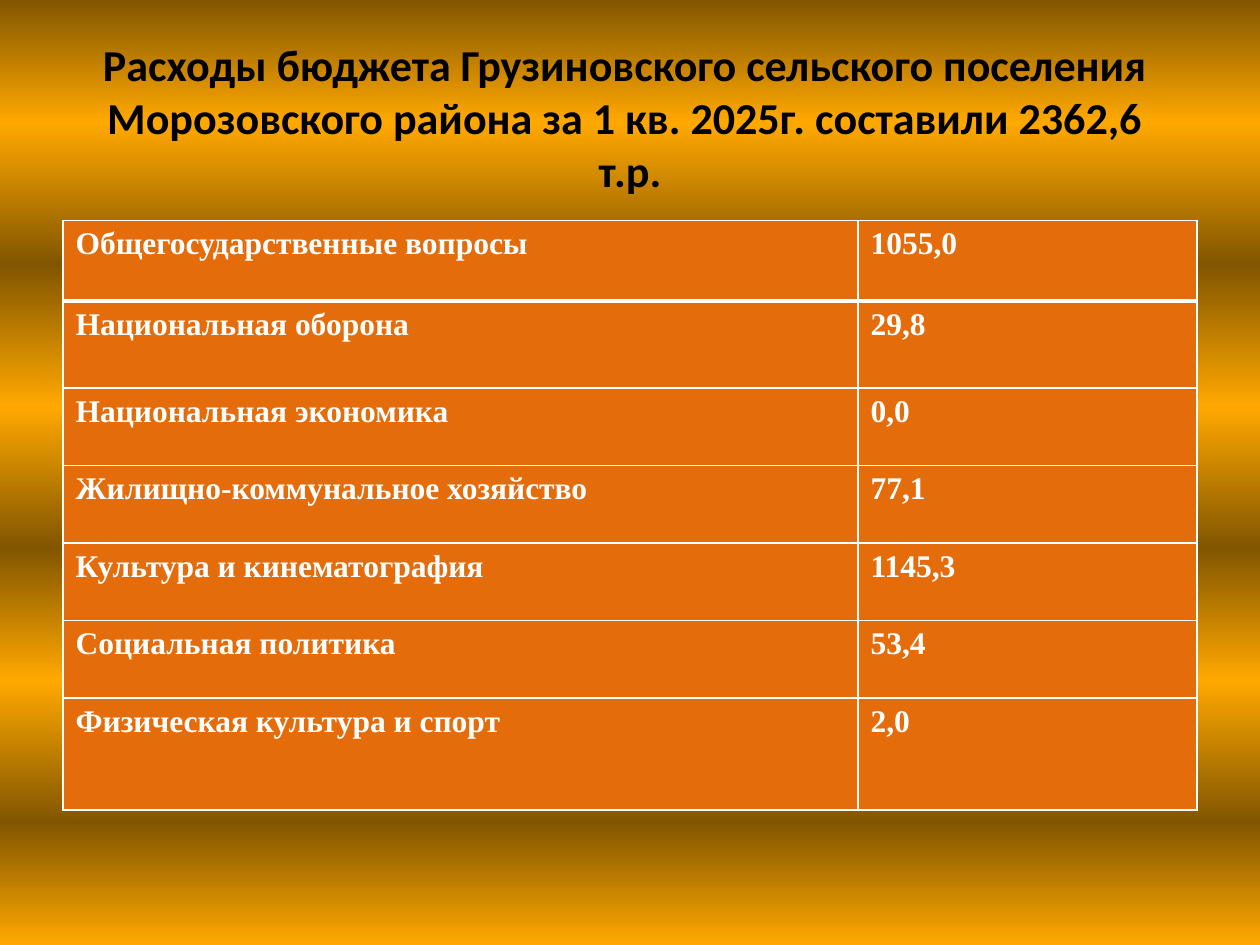
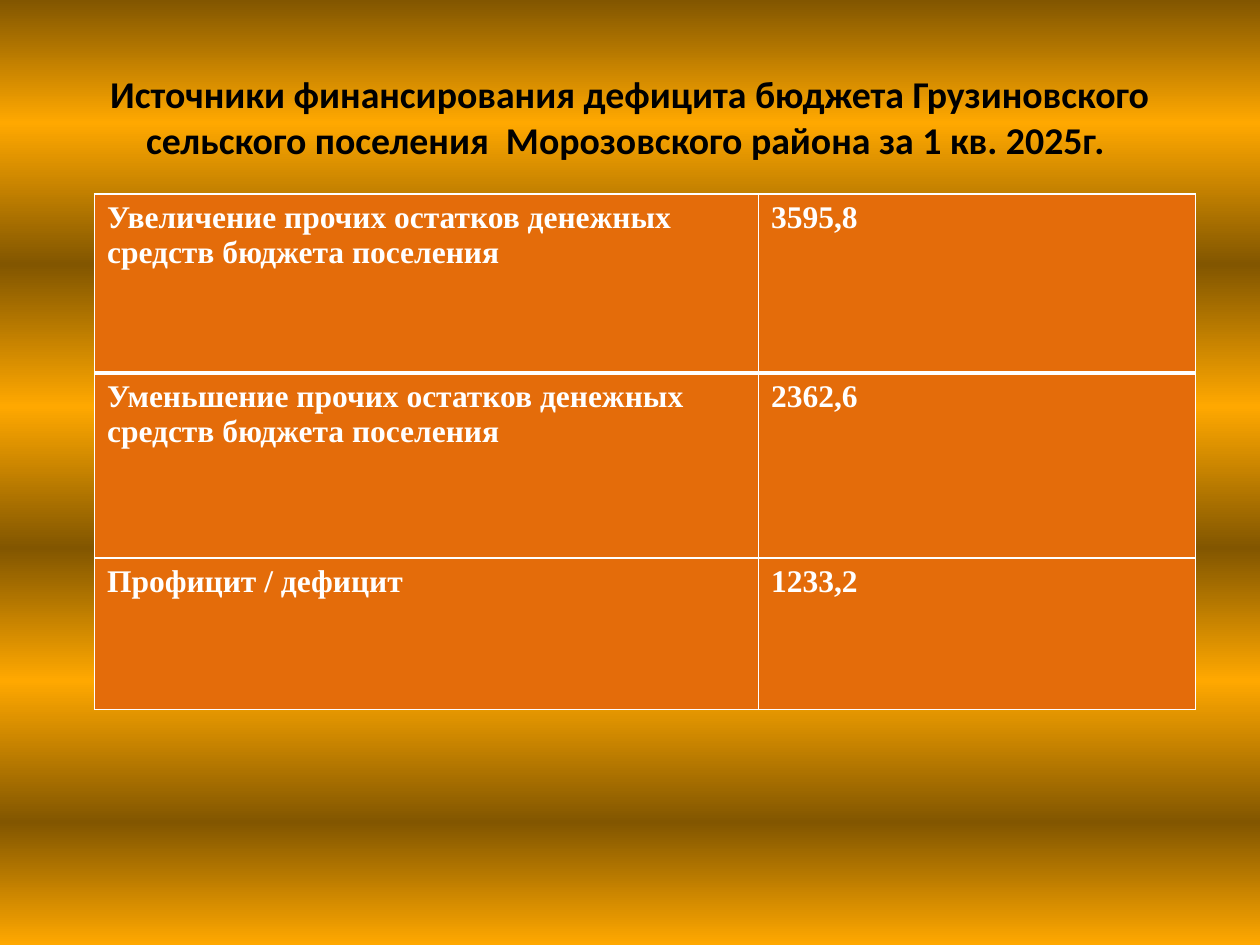
"""Build two budget slides with a striped gradient background and a table each."""
from lxml.etree import SubElement
from pptx import Presentation
from pptx.dml.color import RGBColor
from pptx.enum.text import MSO_ANCHOR, MSO_AUTO_SIZE, PP_ALIGN
from pptx.oxml.ns import qn
from pptx.util import Inches, Pt

DARK, BRIGHT = "825600", "FFA800"
BLACK, WHITE, ORANGE = "000000", "FFFFFF", "E46C0A"
STOPS = [0, 13, 28, 43, 58, 72, 87, 100]
TITLE_BOX = (0.5, 0.3, 9, 1.25)

SLIDES = [
    {
        "title": "Расходы бюджета Грузиновского сельского поселения  "
                 "Морозовского района за 1 кв. 2025г. составили 2362,6  т.р.",
        "size": 25.2,
        "at": (0.5, 1.75),
        "cols": [6.31, 2.69],
        "heights": [0.64, 0.69] + [2.46 / 4] * 4 + [0.89],
        "rows": [
            ("Общегосударственные вопросы", "1055,0"),
            ("Национальная оборона", "29,8"),
            ("Национальная экономика", "0,0"),
            ("Жилищно-коммунальное хозяйство", "77,1"),
            ("Культура и кинематография", "1145,3"),
            ("Социальная политика", "53,4"),
            ("Физическая культура и спорт", "2,0"),
        ],
    },
    {
        "title": "Источники финансирования дефицита бюджета Грузиновского "
                 "сельского поселения  Морозовского района за 1 кв. 2025г. ",
        "size": 21.6,
        "at": (0.75, 1.54),
        "cols": [5.27, 3.47],
        "heights": [1.42, 1.47, 1.2],
        "rows": [
            ("Увеличение прочих остатков денежных средств бюджета поселения", "3595,8"),
            ("Уменьшение прочих остатков денежных средств бюджета поселения", "2362,6"),
            ("Профицит / дефицит", "1233,2"),
        ],
    },
]


def rgb(value):
    """Turn a hex string into a colour."""
    return RGBColor.from_string(value)


def paint_background(master):
    """Give the master evenly alternating horizontal gradient bands."""
    fill = master.background.fill
    fill.gradient()
    grad = master.element.find(".//" + qn("p:bgPr")).find(qn("a:gradFill"))
    stops = grad.find(qn("a:gsLst"))
    for stop in list(stops):
        stops.remove(stop)
    for i, pos in enumerate(STOPS):
        stop = SubElement(stops, qn("a:gs"), pos=str(pos * 1000))
        SubElement(stop, qn("a:srgbClr"), val=(DARK, BRIGHT)[i % 2])
    fill.gradient_angle = 270


def add_run(p, text, font, size, color):
    """Add one bold run to a paragraph."""
    r = p.add_run()
    r.text = text
    r.font.name, r.font.size, r.font.bold = font, Pt(size), True
    r.font.color.rgb = rgb(color)


def add_title(slide, text, size):
    """Fill the title placeholder."""
    sp = slide.shapes.title
    sp.left, sp.top, sp.width, sp.height = map(Inches, TITLE_BOX)
    tf = sp.text_frame
    tf.word_wrap, tf.auto_size = True, MSO_AUTO_SIZE.NONE
    tf.vertical_anchor = MSO_ANCHOR.MIDDLE
    p = tf.paragraphs[0]
    p.alignment = PP_ALIGN.CENTER
    add_run(p, text, "Calibri", size, BLACK)


def set_borders(cell, row):
    """Draw white cell borders, thick between the first two rows."""
    widths = {"L": 1, "R": 1, "T": 3 if row == 1 else 1, "B": 3 if row == 0 else 1}
    tc_pr = cell._tc.get_or_add_tcPr()
    for side, width in widths.items():
        ln = SubElement(tc_pr, qn("a:ln" + side), w=str(Pt(width)))
        SubElement(SubElement(ln, qn("a:solidFill")), qn("a:srgbClr"), val=WHITE)


def add_budget_table(slide, at, cols, heights, rows):
    """Add a table of budget items and amounts."""
    box = map(Inches, (*at, sum(cols), sum(heights)))
    table = slide.shapes.add_table(len(rows), len(cols), *box).table
    table.horz_banding = False
    for column, width in zip(table.columns, cols):
        column.width = Inches(width)
    for i, (height, texts) in enumerate(zip(heights, rows)):
        table.rows[i].height = Inches(height)
        for j, text in enumerate(texts):
            cell = table.cell(i, j)
            set_borders(cell, i)
            cell.fill.solid()
            cell.fill.fore_color.rgb = rgb(ORANGE)
            add_run(cell.text_frame.paragraphs[0], text, "Times New Roman", 18, WHITE)


def main():
    """Build and save the presentation."""
    prs = Presentation()
    prs.slide_width, prs.slide_height = Inches(10), Inches(7.5)
    paint_background(prs.slide_master)
    for item in SLIDES:
        slide = prs.slides.add_slide(prs.slide_layouts.get_by_name("Title Only"))
        add_title(slide, item["title"], item["size"])
        add_budget_table(slide, item["at"], item["cols"], item["heights"], item["rows"])
    prs.save("out.pptx")


if __name__ == "__main__":
    main()
